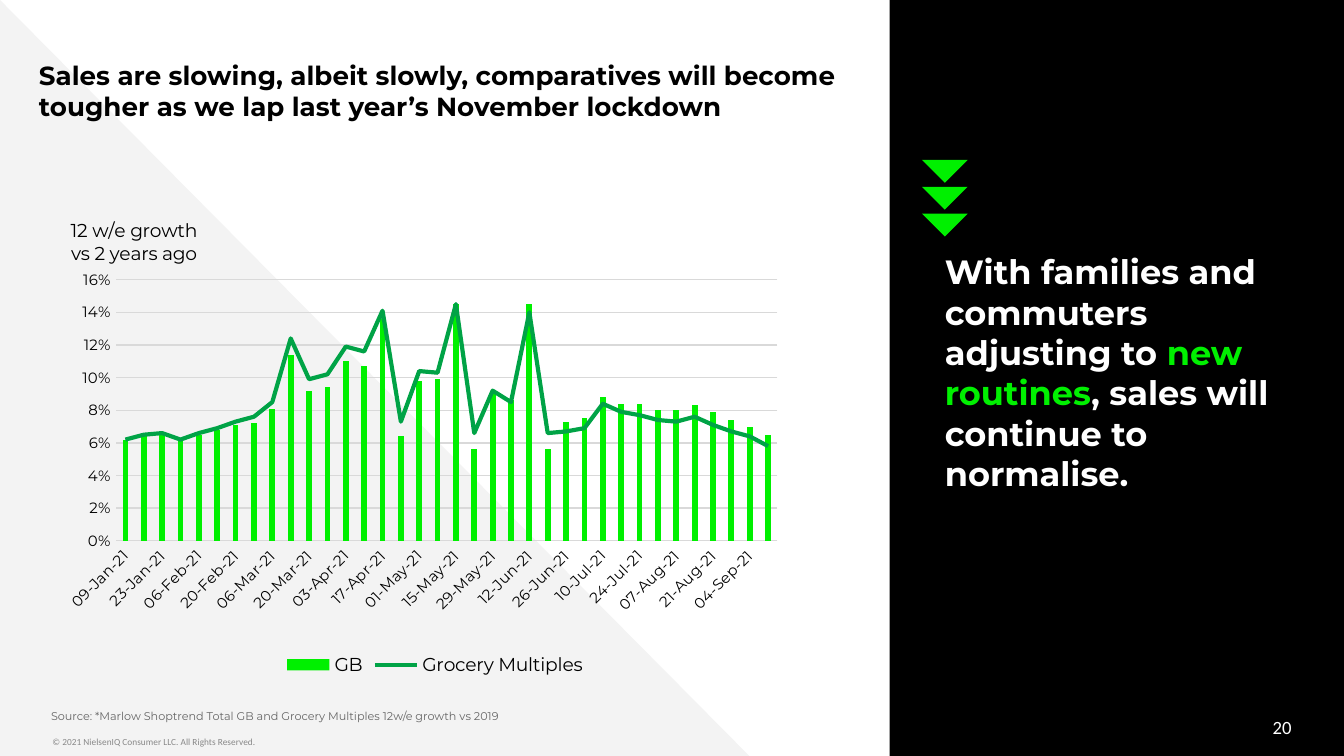
import pptx
import pptx.chart.data
import pptx.dml.color
import pptx.enum.chart
import pptx.enum.shapes
import pptx.enum.text
import pptx.oxml
import pptx.oxml.ns
import pptx.util

Inches = pptx.util.Inches
Pt = pptx.util.Pt
qn = pptx.oxml.ns.qn
SHAPES = pptx.enum.shapes.MSO_SHAPE
ALIGN = pptx.enum.text.PP_ALIGN
ANCHOR = pptx.enum.text.MSO_ANCHOR

BLACK, WHITE, GREEN, DARK_GREEN = "000000", "FFFFFF", "00F000", "00A346"
PALE_GREY, GRID_GREY = "F3F3F3", "D9D9D9"

WEEKS = """09-Jan-21 16-Jan-21 23-Jan-21 30-Jan-21 06-Feb-21 13-Feb-21 20-Feb-21 27-Feb-21
06-Mar-21 13-Mar-21 20-Mar-21 27-Mar-21 03-Apr-21 10-Apr-21 17-Apr-21 24-Apr-21
01-May-21 08-May-21 15-May-21 22-May-21 29-May-21 05-Jun-21 12-Jun-21 19-Jun-21
26-Jun-21 03-Jul-21 10-Jul-21 17-Jul-21 24-Jul-21 31-Jul-21 07-Aug-21 14-Aug-21
21-Aug-21 28-Aug-21 04-Sep-21 11-Sep-21""".split()
GB = [0.062, 0.064, 0.065, 0.061, 0.065, 0.068, 0.071, 0.072, 0.081, 0.114, 0.092, 0.094,
      0.11, 0.107, 0.136, 0.064, 0.098, 0.099, 0.145, 0.056, 0.09, 0.086, 0.145, 0.056,
      0.073, 0.075, 0.088, 0.084, 0.084, 0.08, 0.08, 0.083, 0.079, 0.074, 0.07, 0.065]
MULTIPLES = [0.062, 0.065, 0.066, 0.062, 0.066, 0.069, 0.073, 0.076, 0.085, 0.124, 0.099, 0.102,
             0.119, 0.116, 0.141, 0.073, 0.104, 0.103, 0.145, 0.066, 0.092, 0.085, 0.14, 0.066,
             0.067, 0.069, 0.084, 0.079, 0.077, 0.074, 0.073, 0.076, 0.071, 0.067, 0.064, 0.058]


def rgb(value):
    return pptx.dml.color.RGBColor.from_string(value)


def chart_element(xml):
    namespace = "http://schemas.openxmlformats.org/drawingml/2006/chart"
    return pptx.oxml.parse_xml(f'<c:root xmlns:c="{namespace}">{xml}</c:root>')[0]


def set_layout(parent, index, **values):
    """Place a chart part by fractions of the chart area."""
    for old in parent.findall(qn("c:layout")):
        parent.remove(old)
    inner = '<c:layoutTarget val="inner"/>' if "w" in values else ""
    modes = '<c:xMode val="edge"/><c:yMode val="edge"/>'
    sizes = "".join(f'<c:{key} val="{value}"/>' for key, value in values.items())
    parent.insert(index, chart_element(
        f"<c:layout><c:manualLayout>{inner}{modes}{sizes}</c:manualLayout></c:layout>"))


def move_to_line(chart):
    """Turn the last column series into a line on the same axes."""
    bars = chart.plots[0]._element
    series = bars.findall(qn("c:ser"))[-1]
    for child in series.findall(qn("c:invertIfNegative")):
        series.remove(child)
    line = chart_element('<c:lineChart><c:grouping val="standard"/><c:varyColors val="0"/>'
                         '<c:marker val="1"/></c:lineChart>')
    line.insert(2, series)
    for axis in bars.findall(qn("c:axId")):
        line.append(chart_element(f'<c:axId val="{axis.get("val")}"/>'))
    bars.addnext(line)


class SlideBuilder:
    font = "Montserrat"

    def __init__(self, presentation):
        self.slide = presentation.slides.add_slide(presentation.slide_layouts[5])
        self.shapes = self.slide.shapes

    def style_font(self, font, size, color=BLACK, bold=False, name=None):
        font.name, font.size, font.bold = name or self.font, Pt(size), bold
        font.color.rgb = rgb(color)

    def shape(self, kind, left, top, width, height, fill, rotation=0):
        shape = self.shapes.add_shape(kind, Inches(left), Inches(top),
                                      Inches(width), Inches(height))
        shape.shadow.inherit = False
        shape.fill.solid()
        shape.fill.fore_color.rgb = rgb(fill)
        shape.line.fill.background()
        shape.rotation = rotation

    def fill_text(self, shape, box, parts, size, bold=False, name=None, inset=0.05,
                  anchor=ANCHOR.TOP, align=ALIGN.LEFT):
        """Set place and text; parts are (text, color) pairs."""
        shape.left, shape.top, shape.width, shape.height = map(Inches, box)
        frame = shape.text_frame
        frame.word_wrap = True
        frame.auto_size = pptx.enum.text.MSO_AUTO_SIZE.NONE
        frame.vertical_anchor = anchor
        frame.margin_left = frame.margin_right = 0
        frame.margin_top = frame.margin_bottom = Inches(inset)
        paragraph = frame.paragraphs[0]
        paragraph.alignment = align
        paragraph.line_spacing = 1.0
        for text, color in parts:
            run = paragraph.add_run()
            run.text = text
            self.style_font(run.font, size, color, bold, name)

    def title(self, box, text):
        title = self.shapes.title
        self.shapes._spTree.append(title._element)  # in front of the background
        self.fill_text(title, box, [(text, BLACK)], 14, bold=True, inset=0.1)

    def text(self, box, parts, size, **options):
        self.fill_text(self.shapes.add_textbox(0, 0, 0, 0), box, parts, size, **options)

    def growth_chart(self, left, top, width, height):
        data = pptx.chart.data.CategoryChartData(number_format="0.0%")
        data.categories = WEEKS
        data.add_series("GB", GB)
        data.add_series("Grocery Multiples", MULTIPLES)
        chart = self.shapes.add_chart(
            pptx.enum.chart.XL_CHART_TYPE.COLUMN_CLUSTERED, Inches(left), Inches(top),
            Inches(width), Inches(height), data).chart
        self.style_font(chart.font, 10)
        chart.has_title = False
        chart.has_legend = True
        chart.legend.position = pptx.enum.chart.XL_LEGEND_POSITION.BOTTOM
        chart.legend.include_in_layout = False
        self.style_font(chart.legend.font, 10)

        # Series
        move_to_line(chart)
        columns, lines = chart.plots
        columns.gap_width = 219
        columns.vary_by_categories = False
        gb, multiples = columns.series[0], lines.series[0]
        gb.format.fill.solid()
        gb.format.fill.fore_color.rgb = rgb(GREEN)
        multiples.smooth = False
        multiples.marker.style = pptx.enum.chart.XL_MARKER_STYLE.NONE
        multiples.format.line.color.rgb = rgb(DARK_GREEN)
        multiples.format.line.width = Pt(2.25)

        # Axes
        weeks, growth = chart.category_axis, chart.value_axis
        for axis in (weeks, growth):
            axis.major_tick_mark = axis.minor_tick_mark = pptx.enum.chart.XL_TICK_MARK.NONE
            self.style_font(axis.tick_labels.font, 8)
        weeks._element.txPr.find(qn("a:bodyPr")).set("rot", "-2700000")
        weeks._element.find(qn("c:noMultiLvlLbl")).addprevious(
            chart_element('<c:tickLblSkip val="2"/>'))
        growth.minimum_scale, growth.maximum_scale, growth.major_unit = 0, 0.16, 0.02
        growth.tick_labels.number_format = "0%"
        growth.tick_labels.number_format_is_linked = False
        growth.format.line.fill.background()
        for line in (weeks.format.line, growth.major_gridlines.format.line):
            line.color.rgb = rgb(GRID_GREY)
            line.width = Pt(0.75)

        # Axis title, set level above the axis
        frame = growth.axis_title.text_frame
        frame.text = "12 w/e growth\nvs 2 years ago"
        frame._txBody.find(qn("a:bodyPr")).set("rot", "0")
        for paragraph in frame.paragraphs:
            self.style_font(paragraph.runs[0].font, 10)
        set_layout(growth.axis_title._element, 1, x=0.01, y=0.01)
        set_layout(columns._element.getparent(), 0, x=0.076, y=0.151, w=0.88, h=0.552)


def main():
    presentation = pptx.Presentation()
    presentation.slide_width, presentation.slide_height = Inches(10), Inches(5.625)
    builder = SlideBuilder(presentation)

    # Background
    builder.shape(SHAPES.RECTANGLE, 6.62, -0.02, 3.43, 5.66, BLACK)
    builder.shape(SHAPES.RIGHT_TRIANGLE, 0, 0, 5.59, 5.64, PALE_GREY)

    # Title and chart
    builder.title((0.29, 0.34, 6.25, 0.48),
                  "Sales are slowing, albeit slowly, comparatives will become tougher "
                  "as we lap last year’s November lockdown")
    builder.growth_chart(0.44, 1.55, 5.59, 3.52)

    # Message panel
    for row in range(3):
        builder.shape(SHAPES.RIGHT_TRIANGLE, 6.91, 1.07 + 0.2 * row, 0.24, 0.24, GREEN, 315)
    builder.text((7.03, 1.82, 2.66, 2.79),
                 [("With families and commuters adjusting to ", WHITE),
                  ("new routines", GREEN),
                  (", sales will continue to normalise.", WHITE)], 18, bold=True)

    # Source, copyright and page number
    builder.text((0.38, 5.28, 6.07, 0.2),
                 [("Source: *Marlow Shoptrend Total GB and Grocery Multiples "
                   "12w/e growth vs 2019", "666666")], 6, inset=0.1, anchor=ANCHOR.BOTTOM)
    builder.text((0.39, 5.43, 5.54, 0.2),
                 [("© 2021 NielsenIQ Consumer LLC. All Rights Reserved.", "888888")],
                 5, name="Calibri")
    builder.text((7.36, 5.26, 2.25, 0.3), [("20", WHITE)], 10, name="Calibri",
                 anchor=ANCHOR.MIDDLE, align=ALIGN.RIGHT)

    presentation.save("out.pptx")


if __name__ == "__main__":
    main()
